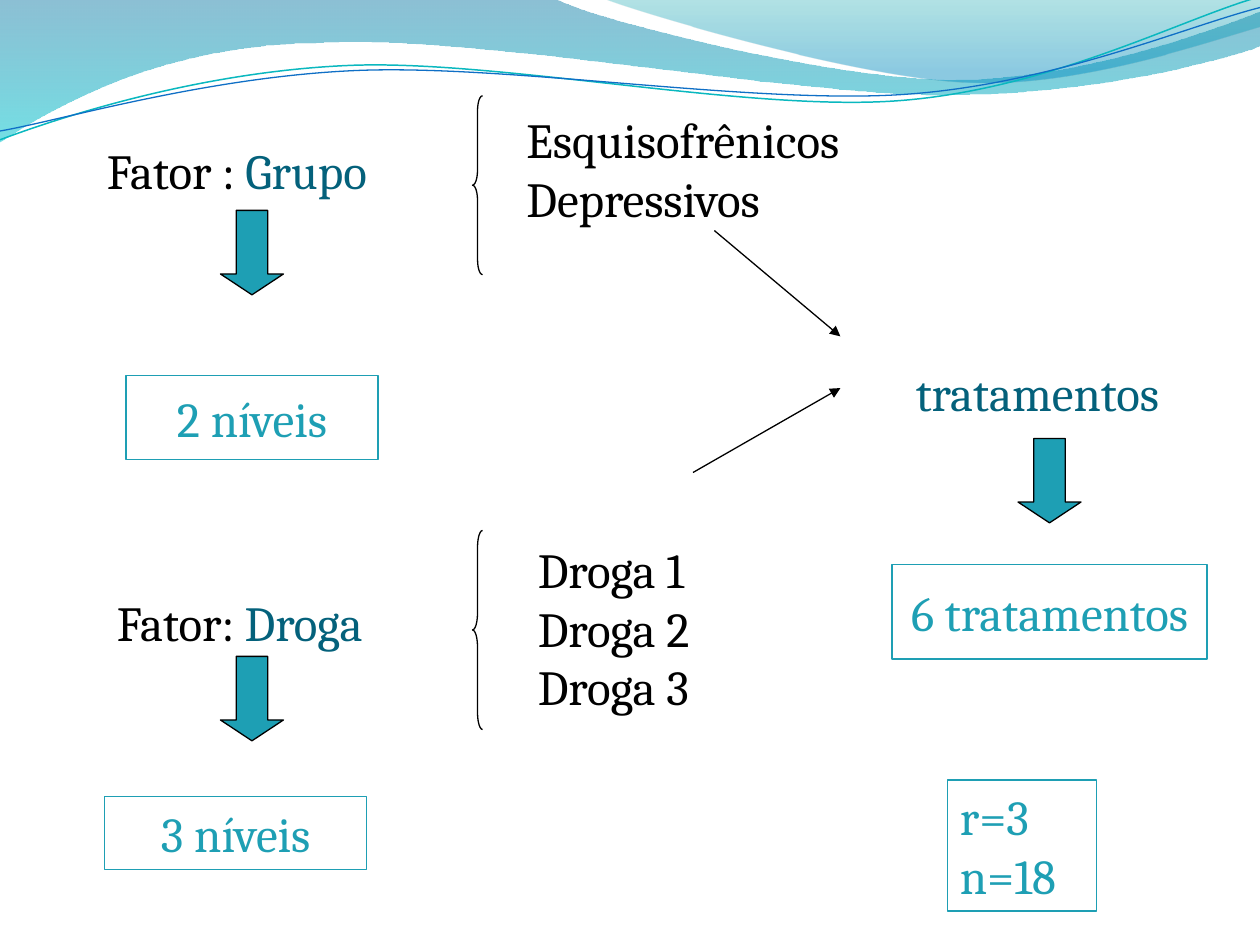
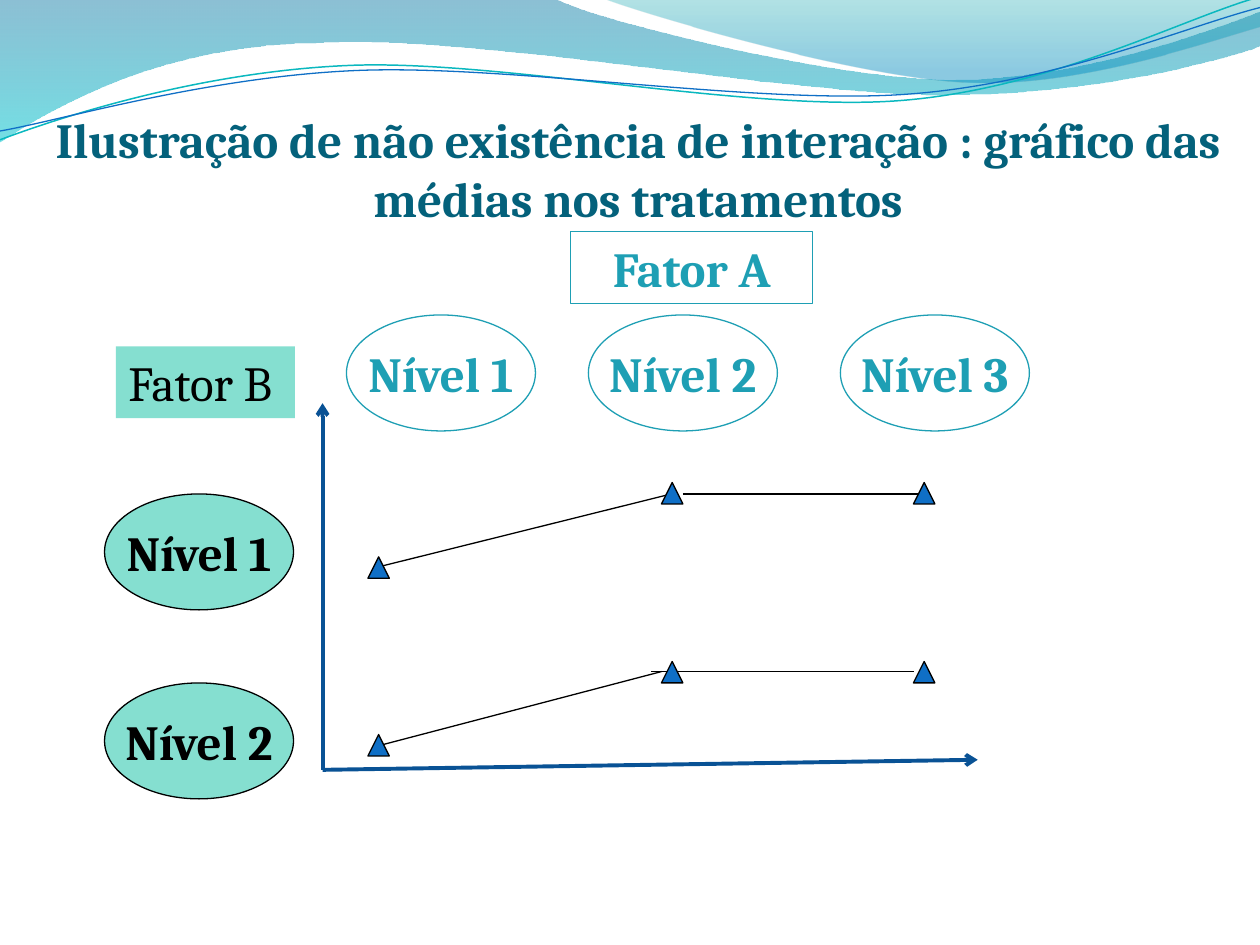
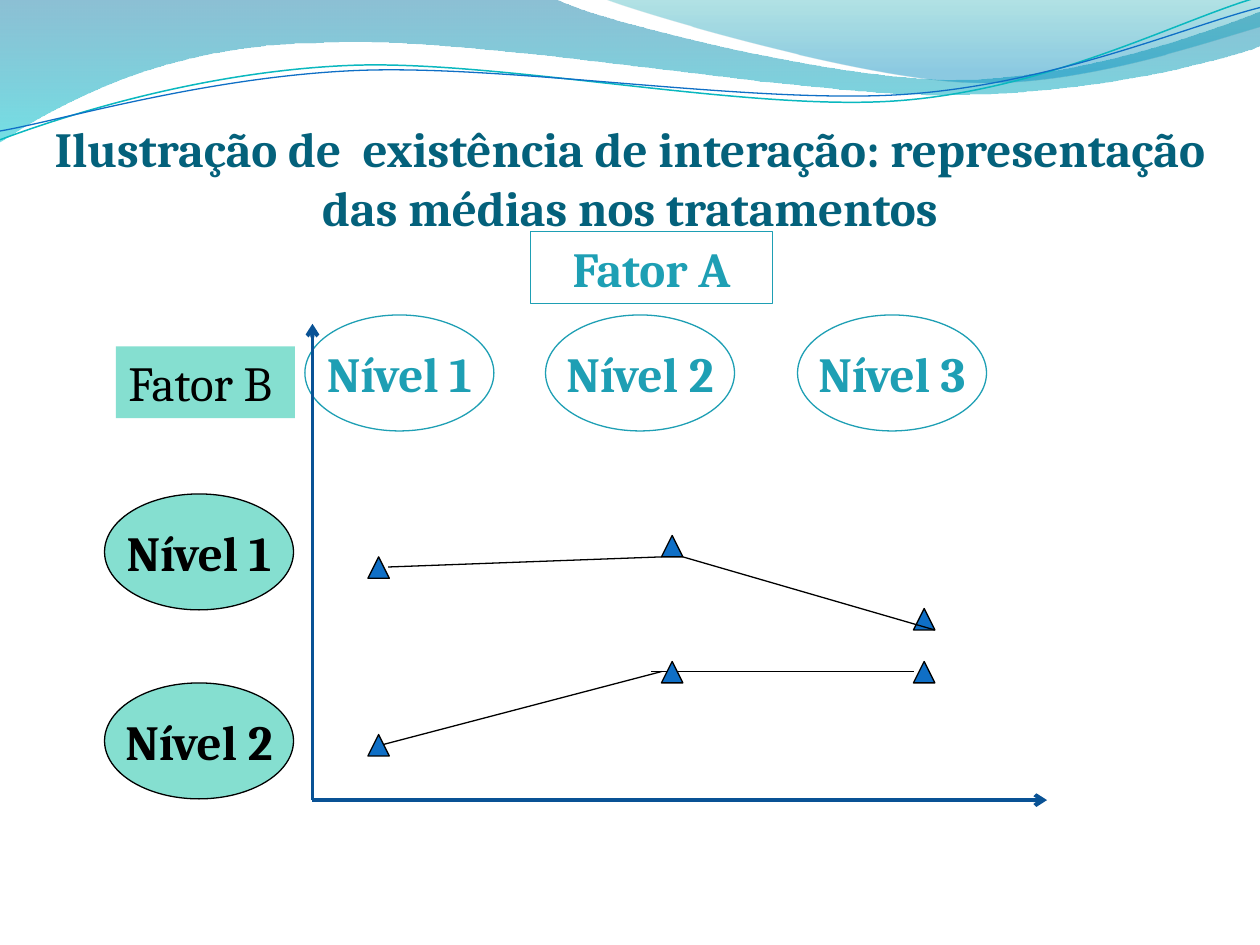
from lxml import etree
from pptx import Presentation
from pptx import util as u
from pptx.dml.color import RGBColor
from pptx.enum import shapes, text
from pptx.oxml.ns import qn

COLORS = {"black": "000000", "teal": "1E9FB4", "title": "04617B", "mint": "85DFD0",
          "blue": "0F6FC6", "aqua": "0AB8BF", "axis": "095295", "wave1": "0074A1",
          "wave2": "00C6CF", "wave3": "00A1A9", "wave4": "008BBF"}
FONT = {"name": "Cambria", "size": u.Pt(28)}
SHAPE = shapes.MSO_SHAPE
LEFT, CENTER = text.PP_ALIGN.LEFT, text.PP_ALIGN.CENTER

# Waves: a step of one point is straight, one of three points is a curve;
# stops are position, colour, opacity
WAVES = [
    {"start": (0, -0.01), "stops": [(0, "wave1", 45), (1, "wave2", 55)],
     "steps": [[(4.4, -0.01)],
               [(4.76, 0.17), (6.64, 0.63), (7.58, 0.63)],
               [(8.53, 0.63), (9.58, 0.26), (10, 0.09)],
               [(10.01, 0.36)],
               [(9.83, 0.44), (8.7, 0.76), (7.46, 0.75)],
               [(6.22, 0.75), (3.82, 0.28), (2.57, 0.34)],
               [(1.29, 0.35), (0.46, 0.83), (-0.01, 1.13)],
               [(0, -0.01)]]},
    {"start": (4.79, -0.01), "stops": [(0, "wave3", 30), (0.8, "wave4", 45)],
     "steps": [[(5.09, 0.11), (6.82, 0.62), (7.69, 0.65)],
               [(8.56, 0.69), (9.61, 0.32), (10, 0.21)],
               [(10, 0)],
               [(4.79, -0.01)]]},
    {"start": (0, 1.11), "line": ("aqua", 0.85),
     "steps": [[(0.48, 0.93), (1.58, 0.57), (2.77, 0.52)],
               [(3.95, 0.47), (5.93, 0.89), (7.13, 0.8)],
               [(8.33, 0.71), (9.38, 0.15), (9.98, -0.02)]]},
    {"start": (0, 1.04), "line": ("blue", 0.75),
     "steps": [[(0.47, 0.96), (1.64, 0.61), (2.83, 0.56)],
               [(4.03, 0.51), (5.97, 0.83), (7.17, 0.75)],
               [(8.36, 0.67), (9.41, 0.21), (10, 0.06)]]},
]

# Slide 1: factors, levels and treatments
LABELS = [
    ((0.75, 1.07, 3, 0.57), [("Fator : ", "black"), ("Grupo", "title")]),
    ((4.08, 0.82, 3.08, 1.04), [("Esquisofrênicos\nDepressivos", "black")]),
    ((0.83, 4.65, 2.75, 0.57), [("Fator: ", "black"), ("Droga", "title")]),
    ((4.17, 4.23, 2, 1.51), [("Droga 1\nDroga 2\nDroga 3", "black")]),
    ((7.17, 2.83, 2.5, 0.57), [("tratamentos", "title")]),
]
BOXES = [
    ((1, 2.98, 2, 0.67), "2 níveis", CENTER, False),
    ((0.83, 6.32, 2.08, 0.58), "3 níveis", CENTER, False),
    ((7.08, 4.48, 2.5, 0.75), "6 tratamentos", CENTER, False),
    ((7.52, 6.19, 1.18, 1.04), "r=3 n=18", LEFT, True),
]
DOWN_ARROWS = [(1.75, 1.67), (1.75, 5.21), (8.08, 3.48)]
BRACES = [(3.75, 0.76, 0.08, 1.42), (3.75, 4.21, 0.08, 1.58)]
POINTERS = [((5.67, 1.83), (6.67, 2.67)), ((5.5, 3.75), (6.67, 3.08))]

# Slides 2 and 3: plots of the means
LEVELS_B = (3.92, 5.42)
MARKER_X = (2.92, 5.25, 7.25)
LOWER_MARKERS = (5.83, 5.25, 5.25)
LOWER_LINES = [((3, 5.92), (5.25, 5.33)), ((5.17, 5.33), (7.25, 5.33))]
PLOTS = [
    {"title": "Ilustração de não existência de interação : gráfico das médias nos tratamentos",
     "title_box": (0.33, 0.82, 9.47, 1.04),
     "factor_a": 4.53, "levels_a": (2.75, 4.67, 6.67),
     "upper_markers": (4.42, 3.83, 3.83),
     "lines_under": [((3, 4.5), (5.33, 3.92)), ((5.42, 3.92), (7.33, 3.92))],
     "lines_over": [],
     "origin": (2.56, 6.11), "tips": [(2.56, 3.2), (7.76, 6.03)]},
    {"title": "Ilustração de  existência de interação: representação das médias nos tratamentos",
     "title_box": (0, 0.89, 10, 1.04),
     "factor_a": 4.21, "levels_a": (2.42, 4.33, 6.33),
     "upper_markers": (4.42, 4.25, 4.83),
     "lines_under": [],
     "lines_over": [((5.42, 4.42), (7.42, 5)), ((3.08, 4.5), (5.25, 4.42))],
     "origin": (2.48, 6.35), "tips": [(2.48, 2.57), (8.31, 6.35)]},
]


def rgb(name):
    return RGBColor.from_string(COLORS[name])


def inches(values):
    return [u.Inches(v) for v in values]


def write(sp, runs, align=LEFT, wrap=True, bold=False, anchor=text.MSO_ANCHOR.TOP):
    tf = sp.text_frame
    formats = {"word_wrap": wrap, "vertical_anchor": anchor,
               "auto_size": text.MSO_AUTO_SIZE.NONE}
    for name, value in formats.items():
        setattr(tf, name, value)
    p = tf.paragraphs[0]
    p.alignment = align
    for words, color in runs:
        for i, row in enumerate(words.split("\n")):
            if i:
                p.add_line_break()
            r = p.add_run()
            r.text = row
            for name, value in {**FONT, "bold": bold}.items():
                setattr(r.font, name, value)
            r.font.color.rgb = rgb(color)


def paint(sp, fill=None, line=None, width=0.75):
    sp.shadow.inherit = False
    if fill:
        sp.fill.solid()
        sp.fill.fore_color.rgb = rgb(fill)
    else:
        sp.fill.background()
    if line:
        sp.line.color.rgb = rgb(line)
        sp.line.width = u.Pt(width)
    else:
        sp.line.fill.background()


def add_shape(s, kind, box, fill=None, line=None):
    sp = s.shapes.add_shape(kind, *inches(box))
    paint(sp, fill, line)
    return sp


def add_line(s, start, end, color="black", width=0.75, head=None):
    c = s.shapes.add_connector(shapes.MSO_CONNECTOR.STRAIGHT, *inches(start + end))
    c.line.color.rgb = rgb(color)
    c.line.width = u.Pt(width)
    if head:
        etree.SubElement(c.line._get_or_add_ln(), qn("a:tailEnd"), type=head)
    etree.SubElement(c._element.spPr, qn("a:effectLst"))


def add_curve(s, start, steps, close):
    """Build a freeform, then join each step of three points into one cubic curve."""
    fb = s.shapes.build_freeform(*inches(start))
    fb.add_line_segments([inches(q) for step in steps for q in step], close=close)
    sp = fb.convert_to_shape()
    segments = iter(list(sp._element.iter(qn("a:lnTo"))))
    for step in steps:
        parts = [next(segments) for _ in step]
        if len(parts) == 3:
            curve = etree.Element(qn("a:cubicBezTo"))
            parts[0].addprevious(curve)
            for part in parts:
                curve.append(part[0])
                part.getparent().remove(part)
    return sp


def add_waves(prs, s):
    """Draw the waves and move them to the master, so that every slide shows them."""
    tree = prs.slide_master.shapes._spTree
    for i, wave in enumerate(WAVES):
        sp = add_curve(s, wave["start"], wave["steps"], "stops" in wave)
        paint(sp, None, *wave.get("line", ()))
        if "stops" in wave:
            sp.fill.gradient()
            sp.fill.gradient_angle = 270
            for stop, (position, color, _) in zip(sp.fill.gradient_stops, wave["stops"]):
                stop.position = position
                stop.color.rgb = rgb(color)
            tints = list(sp._element.spPr.iter(qn("a:srgbClr")))
            for tint, (_, _, opacity) in zip(tints, wave["stops"]):
                etree.SubElement(tint, qn("a:alpha"), val=str(opacity * 1000))
        sp._element.nvSpPr.cNvPr.set("id", str(20 + i))
        tree.insert(2 + i, sp._element)


def build_factors(s):
    for box, runs in LABELS:
        write(s.shapes.add_textbox(*inches(box)), runs)
    for x, y in DOWN_ARROWS:
        sp = add_shape(s, SHAPE.DOWN_ARROW, (x, y, 0.5, 0.67), "teal", "black")
        sp.adjustments[1] = 0.33
    for box in BRACES:
        sp = add_shape(s, SHAPE.LEFT_BRACE, box, line="black")
        sp.adjustments[0] = box[3] / 12 / box[2]
    for box, words, align, wrap in BOXES:
        sp = add_shape(s, SHAPE.RECTANGLE, box, line="teal")
        write(sp, [(words, "teal")], align, wrap, anchor=text.MSO_ANCHOR.MIDDLE)
    for start, end in POINTERS:
        add_line(s, start, end, head="triangle")


def add_level(s, number, x, y, color, fill=None):
    sp = add_shape(s, SHAPE.OVAL, (x, y, 1.5, 0.92), fill, color)
    write(sp, [(f"Nível {number}", color)], CENTER, False, True, text.MSO_ANCHOR.MIDDLE)


def build_plot(s, plot):
    # Title
    title = s.shapes.title
    for name, value in zip(("left", "top", "width", "height"), inches(plot["title_box"])):
        setattr(title, name, value)
    write(title, [(plot["title"], "title")], CENTER, bold=True)
    # Factors and their levels
    for i, x in enumerate(plot["levels_a"], 1):
        add_level(s, i, x, 2.5, "teal")
    for i, y in enumerate(LEVELS_B, 1):
        add_level(s, i, 0.83, y, "black", "mint")
    sp = add_shape(s, SHAPE.RECTANGLE, (plot["factor_a"], 1.84, 1.92, 0.57), line="teal")
    write(sp, [("Fator A", "teal")], CENTER, bold=True)
    sp = add_shape(s, SHAPE.RECTANGLE, (0.92, 2.75, 1.42, 0.57), "mint")
    write(sp, [("Fator B", "black")])
    # Means
    for start, end in plot["lines_under"] + LOWER_LINES:
        add_line(s, start, end)
    for tops in (plot["upper_markers"], LOWER_MARKERS):
        for x, y in zip(MARKER_X, tops):
            add_shape(s, SHAPE.ISOSCELES_TRIANGLE, (x, y, 0.17, 0.17), "blue", "black")
    for start, end in plot["lines_over"]:
        add_line(s, start, end)
    # Axes
    for tip in plot["tips"]:
        add_line(s, plot["origin"], tip, "axis", 2.25, "arrow")


def main():
    prs = Presentation()
    prs.slide_width, prs.slide_height = inches((10, 7.5))
    title_only, blank = prs.slide_layouts[5], prs.slide_layouts[6]
    s = prs.slides.add_slide(blank)
    add_waves(prs, s)
    build_factors(s)
    for plot in PLOTS:
        build_plot(prs.slides.add_slide(title_only), plot)
    prs.save("out.pptx")


if __name__ == "__main__":
    main()
